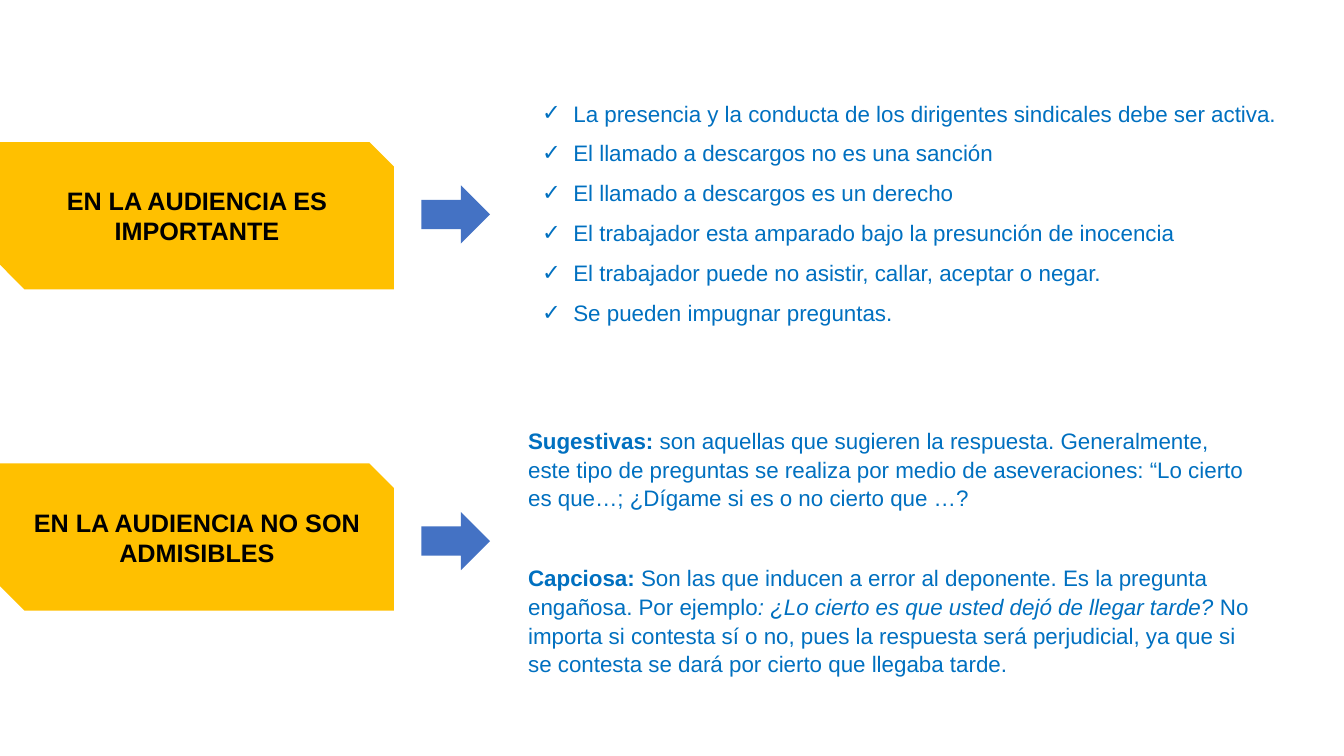
from lxml import etree
from pptx import Presentation
from pptx.dml.color import RGBColor
from pptx.enum.shapes import MSO_SHAPE
from pptx.enum.text import MSO_ANCHOR, PP_ALIGN
from pptx.oxml.ns import qn
from pptx.util import Cm, Pt

SNIPPED, ARROW = MSO_SHAPE.SNIP_2_DIAG_RECTANGLE, MSO_SHAPE.RIGHT_ARROW
MIDDLE, CENTER = MSO_ANCHOR.MIDDLE, PP_ALIGN.CENTER
YELLOW = RGBColor(0xFF, 0xC0, 0x00)
BLUE = RGBColor(0x44, 0x72, 0xC4)
TEXT_BLUE = RGBColor(0x00, 0x70, 0xC0)
BLACK = RGBColor(0, 0, 0)
FONT = "Arial"

# title, label top, arrow top (cm)
TOPICS = [
    ("EN LA AUDIENCIA ES IMPORTANTE", 3.58, 4.67),
    ("EN LA AUDIENCIA NO SON ADMISIBLES", 11.68, 12.9),
]
IMPORTANT = [
    "La presencia y la conducta de los dirigentes sindicales debe ser activa.",
    "El llamado a descargos no es una sanción",
    "El llamado a descargos es un derecho",
    "El trabajador esta amparado bajo la presunción de inocencia",
    "El trabajador puede no asistir, callar, aceptar o negar.",
    "Se pueden impugnar preguntas.",
]
# paragraphs of (text, bold, italic)
NOT_ADMISSIBLE = [
    [
        ("Sugestivas:", True, False),
        (" son aquellas que sugieren la respuesta. Generalmente, este tipo de "
         "preguntas se realiza por medio de aseveraciones: “Lo cierto es que…; "
         "¿Dígame si es o no cierto que …?", False, False),
    ],
    [
        ("Capciosa: ", True, False),
        ("Son las que inducen a error al deponente. Es la pregunta engañosa. "
         "Por ejemplo", False, False),
        (": ¿Lo cierto es que usted dejó de llegar tarde? ", False, True),
        ("No importa si contesta sí o no, pues la respuesta será perjudicial, "
         "ya que si se contesta se dará por cierto que llegaba tarde.", False, False),
    ],
]
IMPORTANT_BOX = (13.41, 2.34, 19.35, 6.02)
NOT_ADMISSIBLE_BOX = (13.06, 10.59, 18.8, 6.63)
LABEL_SIZE = (9.93, 3.71)
ARROW_LEFT, ARROW_SIZE = 10.62, (1.73, 1.47)
CHECK_INDENT = Cm(0.79)


def add_filled(slide, kind, left, top, size, color):
    shape = slide.shapes.add_shape(kind, Cm(left), Cm(top), *map(Cm, size))
    shape.shadow.inherit = False
    shape.fill.solid()
    shape.fill.fore_color.rgb = color
    shape.line.fill.background()
    return shape


def style(font, size, color, bold=False, italic=False):
    font.name, font.size = FONT, Pt(size)
    font.bold, font.italic = bold, italic
    font.color.rgb = color


def add_check(paragraph):
    """Give the paragraph a hanging check mark."""
    properties = paragraph._p.get_or_add_pPr()
    properties.set("marL", str(CHECK_INDENT))
    properties.set("indent", str(-CHECK_INDENT))
    etree.SubElement(properties, qn("a:buFont")).set("typeface", FONT)
    etree.SubElement(properties, qn("a:buChar")).set("char", "✓")


def add_paragraphs(slide, box, paragraphs, gap, checked=False):
    frame = slide.shapes.add_textbox(*map(Cm, box)).text_frame
    frame.word_wrap = True
    for index, runs in enumerate(paragraphs):
        paragraph = frame.add_paragraph() if index else frame.paragraphs[0]
        if checked:
            add_check(paragraph)
        paragraph.line_spacing = 1.07
        paragraph.space_after = Pt(gap)
        for text, bold, italic in runs:
            run = paragraph.add_run()
            run.text = text
            style(run.font, 16, TEXT_BLUE, bold, italic)


def main():
    presentation = Presentation()
    presentation.slide_width, presentation.slide_height = Cm(33.87), Cm(19.05)
    slide = presentation.slides.add_slide(presentation.slide_layouts[6])

    for title, label_top, arrow_top in TOPICS:
        label = add_filled(slide, SNIPPED, 0, label_top, LABEL_SIZE, YELLOW)
        frame = label.text_frame
        frame.word_wrap = True
        frame.vertical_anchor = MIDDLE
        frame.text = title
        paragraph = frame.paragraphs[0]
        paragraph.alignment = CENTER
        style(paragraph.runs[0].font, 18, BLACK, bold=True)
        add_filled(slide, ARROW, ARROW_LEFT, arrow_top, ARROW_SIZE, BLUE)

    checks = [[(text, False, False)] for text in IMPORTANT]
    add_paragraphs(slide, IMPORTANT_BOX, checks, gap=8, checked=True)
    add_paragraphs(slide, NOT_ADMISSIBLE_BOX, NOT_ADMISSIBLE, gap=36.5)
    presentation.save("out.pptx")


if __name__ == "__main__":
    main()
